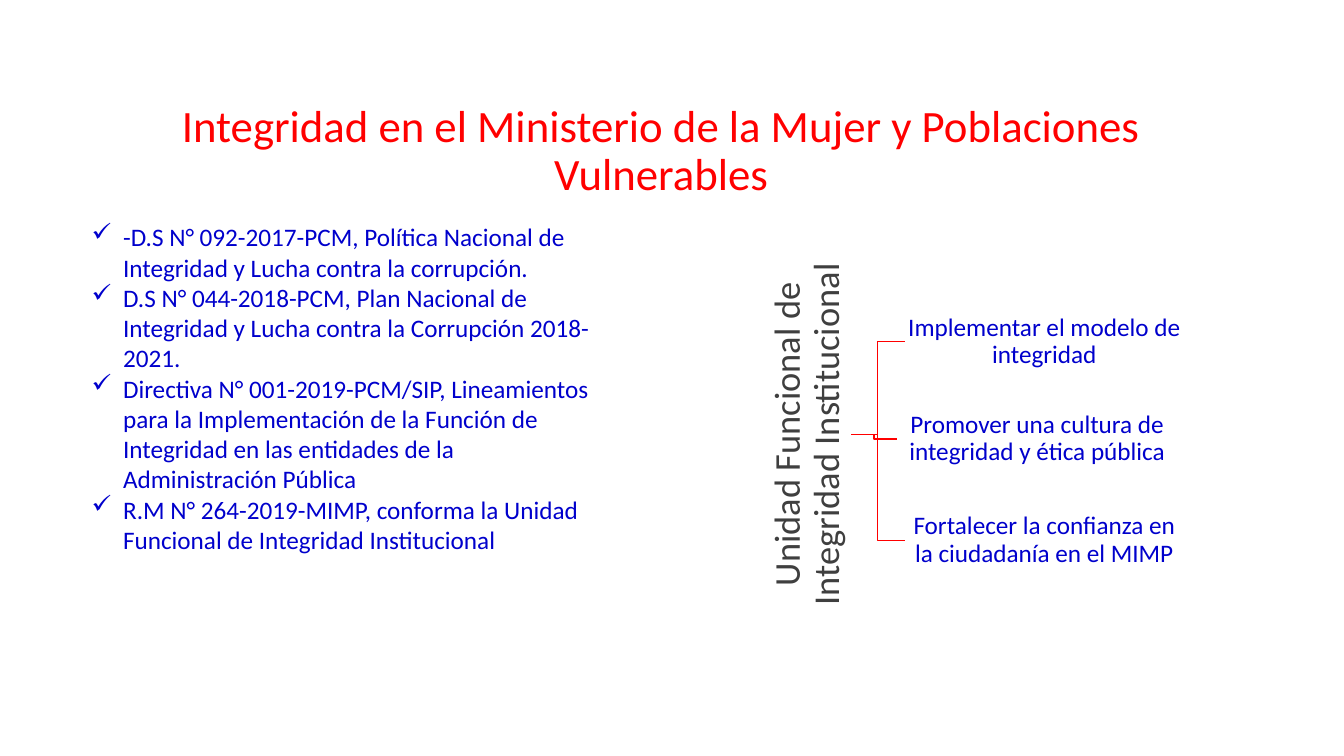
from pptx import Presentation
from pptx.dml.color import RGBColor
from pptx.enum.shapes import MSO_SHAPE
from pptx.enum.text import MSO_ANCHOR, PP_ALIGN
from pptx.oxml.ns import qn
from pptx.util import Pt
from lxml import etree

RECT = MSO_SHAPE.RECTANGLE
TOP, MIDDLE = MSO_ANCHOR.TOP, MSO_ANCHOR.MIDDLE
LEFT, CENTER = PP_ALIGN.LEFT, PP_ALIGN.CENTER

# Content
TITLE = "Integridad en el Ministerio de la Mujer y Poblaciones Vulnerables"
NORMS = [
    "-D.S N° 092-2017-PCM, Política Nacional de Integridad y Lucha contra la corrupción.",
    "D.S N° 044-2018-PCM, Plan Nacional de Integridad y Lucha contra la Corrupción 2018-2021.",
    "Directiva N° 001-2019-PCM/SIP, Lineamientos para la Implementación de la Función de "
    "Integridad en las entidades de la Administración Pública",
    "R.M N° 264-2019-MIMP, conforma la Unidad Funcional de Integridad Institucional",
]
UNIT = "Unidad Funcional de Integridad Institucional"
# text, left edge, vertical centre
GOALS = [
    ("Implementar el modelo de integridad", 646.6, 244),
    ("Promover una cultura de integridad y ética pública", 641.5, 313.6),
    ("Fortalecer la confianza en la ciudadanía en el MIMP", 646.6, 386),
]

# Theme
THEME = {
    "font": "Calibri",
    "red": RGBColor(0xFF, 0x00, 0x00),
    "blue": RGBColor(0x00, 0x00, 0xCC),
    "gray": RGBColor(0x3F, 0x3F, 0x3F),
    "white": RGBColor(0xFF, 0xFF, 0xFF),
    "title": 32, "unit": 26, "body": 18, "line": 0.85,
}

# Layout
SLIDE_W, SLIDE_H = 960, 540
TITLE_BOX = (58.3, 70.6, 828, 104.4)
NORMS_BOX = (58.3, 154.8, 375.8, 269.3)
UNIT_W, UNIT_H = 319, 60.4
UNIT_X, UNIT_Y = 577, 310.3
ROOT_X = UNIT_X + UNIT_H / 2
GOAL_W, GOAL_H = 198.7, 60.4
INDENT = 22.5


def put_text(sp, lines, *, size, color, align=CENTER, anchor=MIDDLE,
             margins=(1, 1), spacing=0.9, bullet=None):
    tf = sp.text_frame
    tf.word_wrap = True
    tf.vertical_anchor = anchor
    tf.margin_left = tf.margin_right = Pt(margins[0])
    tf.margin_top = tf.margin_bottom = Pt(margins[1])
    for i, line in enumerate(lines):
        p = tf.paragraphs[0] if i == 0 else tf.add_paragraph()
        p.alignment, p.line_spacing = align, spacing
        if bullet:
            pPr = p._p.get_or_add_pPr()
            pPr.set("marL", str(Pt(INDENT)))
            pPr.set("indent", str(-Pt(INDENT)))
            etree.SubElement(pPr, qn("a:buChar")).set("char", bullet)
        r = p.add_run()
        r.text = line
        r.font.name, r.font.size = THEME["font"], Pt(size)
        r.font.color.rgb = color


def add_box(s, x, y, w, h):
    sp = s.shapes.add_shape(RECT, Pt(x), Pt(y), Pt(w), Pt(h))
    sp.shadow.inherit = False
    sp.fill.solid()
    sp.fill.fore_color.rgb = THEME["white"]
    sp.line.color.rgb = THEME["white"]
    sp.line.width = Pt(THEME["line"])
    return sp


def add_branch(s, x, y):
    bend = (ROOT_X + x) / 2
    path = s.shapes.build_freeform(Pt(ROOT_X), Pt(UNIT_Y))
    path.add_line_segments(
        [(Pt(bend), Pt(UNIT_Y)), (Pt(bend), Pt(y)), (Pt(x), Pt(y))], close=False)
    sp = path.convert_to_shape()
    sp.shadow.inherit = False
    sp.fill.background()
    sp.line.color.rgb = THEME["red"]
    sp.line.width = Pt(THEME["line"])


prs = Presentation()
prs.slide_width, prs.slide_height = Pt(SLIDE_W), Pt(SLIDE_H)
s = prs.slides.add_slide(prs.slide_layouts[6])

# Title
title = s.shapes.add_textbox(*map(Pt, TITLE_BOX))
put_text(title, [TITLE], size=THEME["title"], color=THEME["red"],
         anchor=TOP, margins=(7.2, 3.6))

# Branches, drawn behind the boxes
for _, x, y in reversed(GOALS):
    add_branch(s, x, y)

# Unit, turned to read upwards
unit = add_box(s, UNIT_X - UNIT_W / 2, UNIT_Y - UNIT_H / 2, UNIT_W, UNIT_H)
unit.rotation = 270
put_text(unit, [UNIT], size=THEME["unit"], color=THEME["gray"])

# Goals
for text, x, y in GOALS:
    goal = add_box(s, x, y - GOAL_H / 2, GOAL_W, GOAL_H)
    put_text(goal, [text], size=THEME["body"], color=THEME["blue"])

# Norms
norms = s.shapes.add_textbox(*map(Pt, NORMS_BOX))
put_text(norms, NORMS, size=THEME["body"], color=THEME["blue"], align=LEFT,
         anchor=TOP, margins=(7.2, 3.6), spacing=1.0, bullet="✓")

prs.save("out.pptx")
